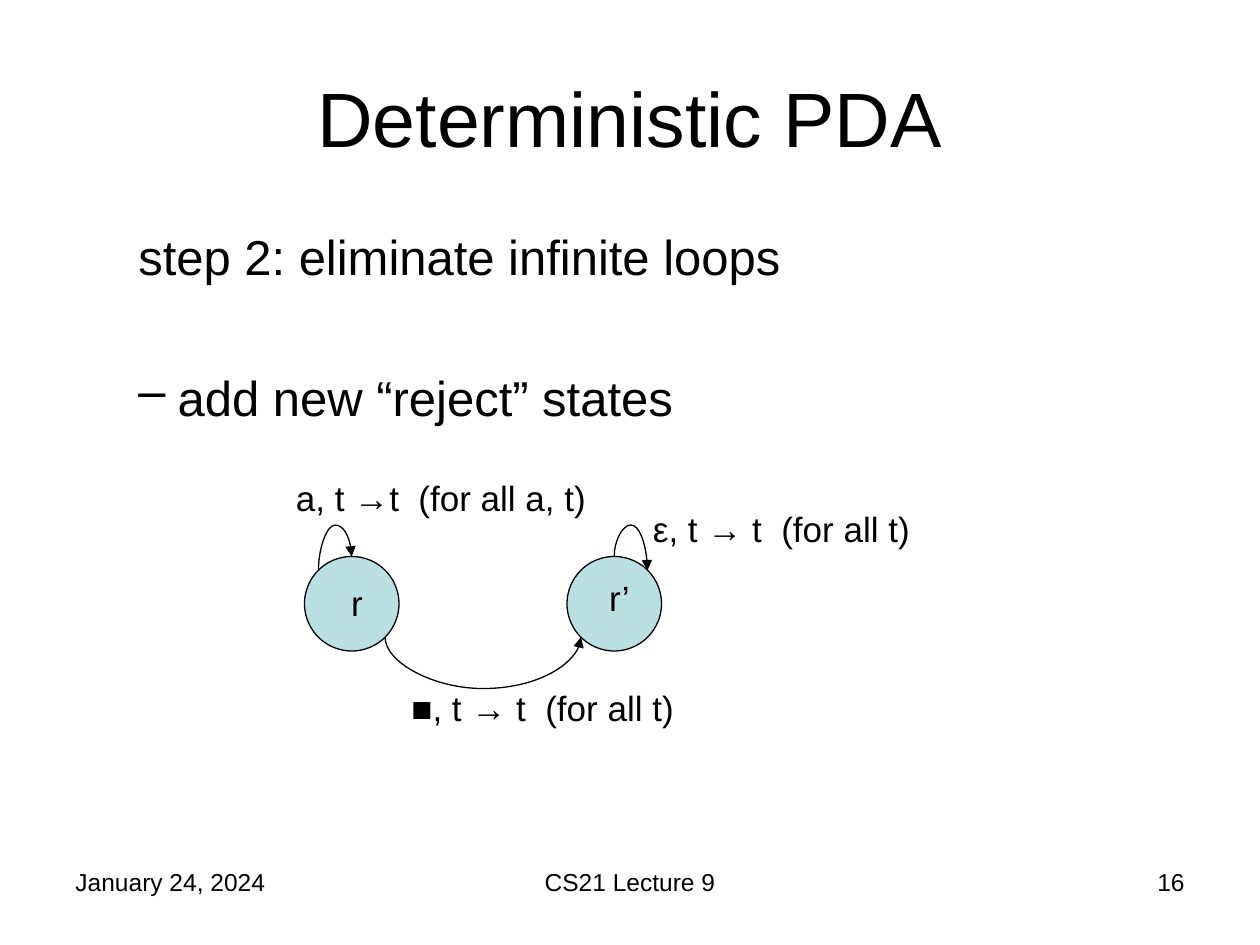
from typing import NamedTuple

from lxml import etree
from pptx import Presentation
from pptx import util as u
from pptx.dml.color import RGBColor
from pptx.enum import shapes as sh, text as tx
from pptx.oxml import ns

BLACK = RGBColor(0x00, 0x00, 0x00)
TEAL = RGBColor(0xBB, 0xE0, 0xE3)
FACE = "Arial"
SIZE = 54
LEFT, MID, RIGHT = tx.PP_ALIGN.LEFT, tx.PP_ALIGN.CENTER, tx.PP_ALIGN.RIGHT


class Line(NamedTuple):
    words: str
    gap: float = 0
    mark: str = ""


class Label(NamedTuple):
    box: tuple[float, float, float, float]
    lines: list[Line]
    size: float
    align: tx.PP_ALIGN = LEFT
    anchor: tx.MSO_ANCHOR = tx.MSO_ANCHOR.TOP
    dent: tuple[float, float] = (0, 0)


class State(NamedTuple):
    left: float
    top: float


class Arc(NamedTuple):
    start: tuple[float, float]
    end: tuple[float, float]
    peak: float


def note(left: float, top: float, width: float, words: str, align=LEFT) -> Label:
    return Label((left, top, width, 31), [Line(words, 2)], 20, align)


def foot(left: float, width: float, words: str, align=LEFT) -> Label:
    return Label((left, 492, width, 37.5), [Line(words)], 14, align)


LABELS = [
    foot(36, 168, "January 24, 2024"),
    foot(246, 228, "CS21 Lecture 9", MID),
    foot(516, 168, "16", RIGHT),
    Label((36, 21.5, 648, 90), [Line("Deterministic PDA")], 44, MID,
          tx.MSO_ANCHOR.MIDDLE),
    Label((36, 126, 648, 126),
          [Line("step 2: eliminate infinite loops", 4),
           Line("add new “reject” states", 46.7, "–")],
          28, dent=(58.5, -22.5)),
    note(336, 326, 36, "r’", MID),
    note(186, 329, 36, "r", MID),
    note(162, 268.5, 234, "a, t →t  (for all a, t)"),
    note(366, 286.5, 234, "ε, t → t  (for all t)"),
    note(228, 389, 234, "■, t → t  (for all t)"),
]
STATES = [State(174, 318), State(324, 318)]
ARCS = [
    Arc((182, 326), (201, 318), 300),
    Arc((351, 318), (370, 326), 300),
    Arc((220, 364), (332, 364.1), 390),
]


def put(item, facts: dict) -> None:
    for name, value in facts.items():
        setattr(item, name, value)


def write(slide, label: Label) -> None:
    frame = slide.shapes.add_textbox(*map(u.Pt, label.box)).text_frame
    put(frame, {"word_wrap": True, "vertical_anchor": label.anchor})
    for row, line in enumerate(label.lines):
        para = frame.add_paragraph() if row else frame.paragraphs[0]
        put(para, {"alignment": label.align, "space_before": u.Pt(line.gap)})
        props = para._p.get_or_add_pPr()
        for key, size in zip(("marL", "indent"), label.dent):
            props.set(key, str(u.Pt(size)))
        if line.mark:
            etree.SubElement(props, ns.qn("a:buChar"), char=line.mark)
        run = para.add_run()
        run.text = line.words
        put(run.font, {"name": FACE, "size": u.Pt(label.size)})
        run.font.color.rgb = BLACK


def ink(line) -> None:
    line.color.rgb = BLACK
    line.width = u.Pt(0.75)


def ring(slide, state: State) -> None:
    oval = slide.shapes.add_shape(
        sh.MSO_SHAPE.OVAL, *map(u.Pt, (*state, SIZE, SIZE)))
    oval.shadow.inherit = False
    oval.fill.solid()
    oval.fill.fore_color.rgb = TEAL
    ink(oval.line)


def bend(slide, arc: Arc) -> None:
    (x1, y1), (x2, y2) = arc.start, arc.end
    wide, high = abs(y2 - y1), x2 - x1
    link = slide.shapes.add_connector(sh.MSO_CONNECTOR.CURVE, 0, 0, 0, 0)
    put(link, {"left": u.Pt((x1 + x2 - wide) / 2),
               "top": u.Pt((y1 + y2 - high) / 2),
               "width": u.Pt(wide), "height": u.Pt(high)})
    ink(link.line)
    props = link._element.spPr
    form = props.find(ns.qn("a:xfrm"))
    form.set("rot", str(270 * 60000))
    if y2 > y1:
        form.set("flipH", "1")
    curve = props.find(ns.qn("a:prstGeom"))
    guides = curve.find(ns.qn("a:avLst"))
    if guides is None:
        guides = etree.SubElement(curve, ns.qn("a:avLst"))
    ratio = round((arc.peak - y1) / (y2 - y1) * 100000)
    etree.SubElement(guides, ns.qn("a:gd"), name="adj1", fmla=f"val {ratio}")
    etree.SubElement(props.find(ns.qn("a:ln")), ns.qn("a:tailEnd"),
                     type="triangle")
    etree.SubElement(props, ns.qn("a:effectLst"))


def main() -> None:
    deck = Presentation()
    put(deck, {"slide_width": u.Pt(720), "slide_height": u.Pt(540)})
    slide = deck.slides.add_slide(deck.slide_layouts[6])
    for draw, items in ((ring, STATES), (bend, ARCS), (write, LABELS)):
        for item in items:
            draw(slide, item)
    deck.save("out.pptx")


if __name__ == "__main__":
    main()
